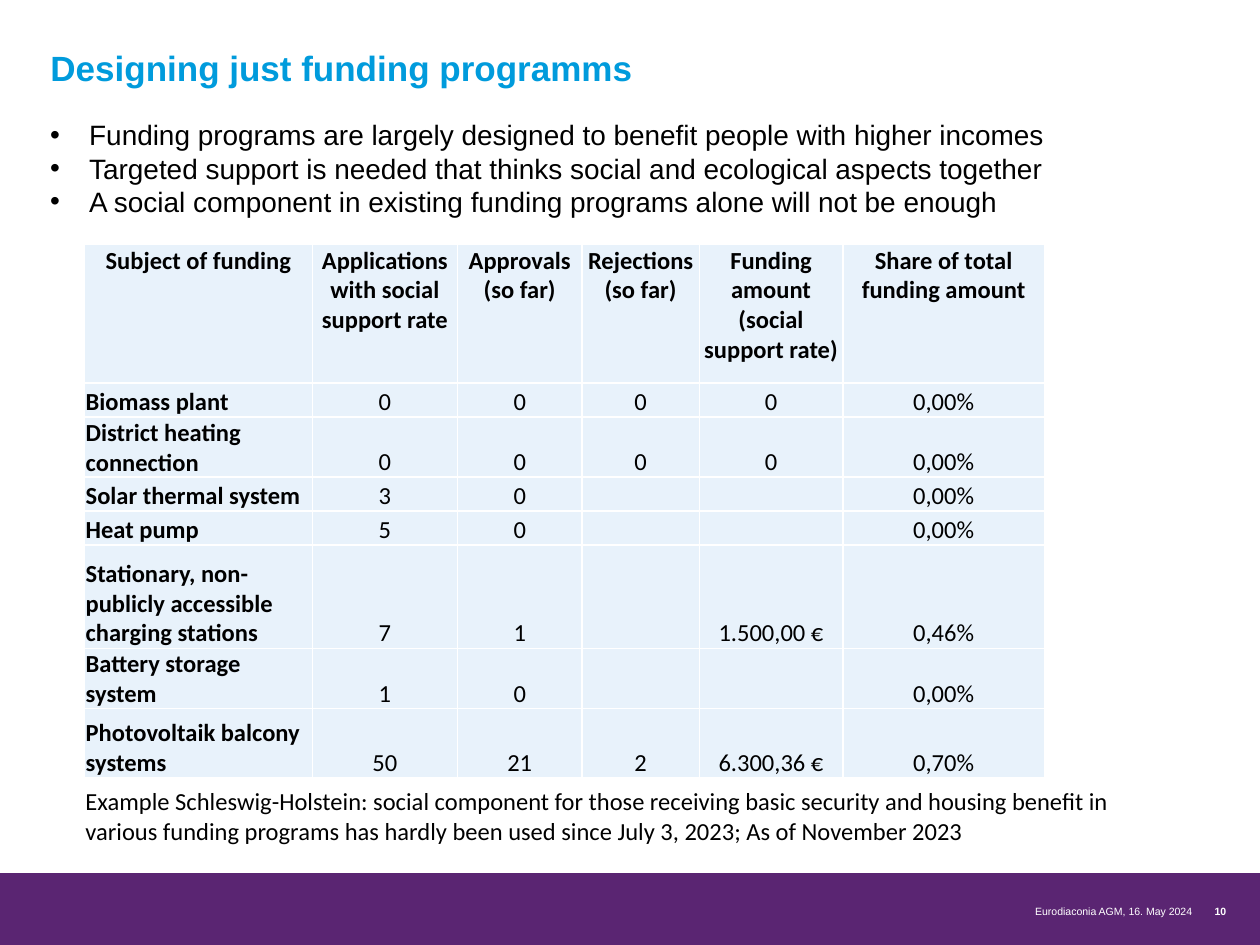
from dataclasses import dataclass

from lxml.etree import SubElement
from pptx import Presentation
from pptx.dml.color import RGBColor
from pptx.enum.shapes import MSO_SHAPE
from pptx.enum.text import MSO_ANCHOR as Anchor, MSO_AUTO_SIZE as AutoSize, PP_ALIGN as Align
from pptx.oxml.ns import qn
from pptx.util import Inches, Pt


@dataclass(frozen=True)
class Theme:
    heading_font: str = "Arial"
    table_font: str = "Calibri"
    heading: str = "009BDC"
    ink: str = "000000"
    white: str = "FFFFFF"
    band: str = "5A2572"
    cell: str = "E8F2FB"
    title_size: int = 20
    bullet_size: int = 16
    table_size: int = 14
    footer_size: int = 6


BULLETS = [
    "Funding programs are largely designed to benefit people with higher incomes",
    "Targeted support is needed that thinks social and ecological aspects together",
    "A social component in existing funding programs alone will not be enough",
]
FUNDING = [
    ["Subject of funding", "Applications with social support rate", "Approvals (so far)",
     "Rejections (so far)", "Funding amount (social support rate)",
     "Share of total funding amount"],
    ["Biomass plant", "0", "0", "0", "0", "0,00%"],
    ["District heating connection", "0", "0", "0", "0", "0,00%"],
    ["Solar thermal system", "3", "0", "", "", "0,00%"],
    ["Heat pump", "5", "0", "", "", "0,00%"],
    ["Stationary, non-publicly accessible charging stations", "7", "1", "",
     "1.500,00 €", "0,46%"],
    ["Battery storage system", "1", "0", "", "", "0,00%"],
    ["Photovoltaik balcony systems", "50", "21", "2", "6.300,36 €", "0,70%"],
]
COLUMN_WIDTHS = [1.81, 1.15, 0.99, 0.93, 1.14, 1.6]
ROW_HEIGHTS = [1.1, 0.27, 0.27, 0.27, 0.27, 0.82, 0.27, 0.55]
CAPTION = ("Example Schleswig-Holstein: social component for those receiving basic security "
           "and housing benefit in various funding programs has hardly been used "
           "since July 3, 2023; As of November 2023")


class SlideBuilder:
    def __init__(self, slide, theme):
        self.slide = slide
        self.theme = theme

    def add_span(self, para, text, font, size, color, bold=False):
        span = para.add_run()
        span.text = text
        span.font.name = font
        span.font.size = Pt(size)
        span.font.bold = bold
        span.font.color.rgb = RGBColor.from_string(color)

    def place(self, shape, left, top, width, height):
        shape.left, shape.top = Inches(left), Inches(top)
        shape.width, shape.height = Inches(width), Inches(height)

    def title(self, text, *bounds):
        title = self.slide.shapes.title
        self.place(title, *bounds)
        frame = title.text_frame
        frame.auto_size = AutoSize.NONE
        frame.vertical_anchor = Anchor.TOP
        para = frame.paragraphs[0]
        para.alignment = Align.LEFT
        para.line_spacing = Pt(22)
        self.add_span(para, text, self.theme.heading_font, self.theme.title_size,
                      self.theme.heading, bold=True)

    def text_box(self, *bounds, anchor=Anchor.TOP, wrap=True):
        box = self.slide.shapes.add_textbox(*map(Inches, bounds))
        frame = box.text_frame
        frame.word_wrap = wrap
        frame.vertical_anchor = anchor
        return frame

    def bullets(self, items, *bounds):
        frame = self.text_box(*bounds)
        for index, item in enumerate(items):
            para = frame.add_paragraph() if index else frame.paragraphs[0]
            para.line_spacing = Pt(19)
            properties = para._p.get_or_add_pPr()
            indent = Inches(0.31)
            properties.set("marL", str(indent))
            properties.set("indent", str(-indent))
            SubElement(properties, qn("a:buFont"), typeface=self.theme.heading_font)
            SubElement(properties, qn("a:buChar"), char="•")
            self.add_span(para, item, self.theme.heading_font, self.theme.bullet_size,
                          self.theme.ink)

    def caption(self, text, *bounds):
        para = self.text_box(*bounds).paragraphs[0]
        self.add_span(para, text, self.theme.table_font, self.theme.table_size, self.theme.ink)

    def footer(self, text, *bounds, bold=False, wrap=True):
        para = self.text_box(*bounds, anchor=Anchor.BOTTOM, wrap=wrap).paragraphs[0]
        para.alignment = Align.RIGHT
        self.add_span(para, text, self.theme.heading_font, self.theme.footer_size,
                      self.theme.white, bold)

    def band(self, *bounds):
        band = self.slide.shapes.add_shape(MSO_SHAPE.RECTANGLE, *map(Inches, bounds))
        band.shadow.inherit = False
        band.fill.solid()
        band.fill.fore_color.rgb = RGBColor.from_string(self.theme.band)
        band.line.fill.background()

    def style_cell(self, cell):
        """Set the insets, white borders and fill; borders must precede the fill."""
        cell.margin_left = cell.margin_right = cell.margin_top = Inches(0.01)
        cell.margin_bottom = 0
        properties = cell._tc.get_or_add_tcPr()
        for side in ("lnL", "lnR", "lnT", "lnB"):
            border = SubElement(properties, qn(f"a:{side}"), w=str(Pt(1)))
            paint = SubElement(border, qn("a:solidFill"))
            SubElement(paint, qn("a:srgbClr"), val=self.theme.white)
        cell.fill.solid()
        cell.fill.fore_color.rgb = RGBColor.from_string(self.theme.cell)

    def table(self, rows, left, top, widths, heights):
        frame = self.slide.shapes.add_table(
            len(rows), len(widths), Inches(left), Inches(top),
            Inches(sum(widths)), Inches(sum(heights)))
        table = frame.table
        table.first_row = table.horz_banding = False
        for column, width in zip(table.columns, widths):
            column.width = Inches(width)
        for row, height in zip(table.rows, heights):
            row.height = Inches(height)
        for row_index, values in enumerate(rows):
            for column_index, value in enumerate(values):
                cell = table.cell(row_index, column_index)
                self.style_cell(cell)
                is_header, is_label = row_index == 0, column_index == 0
                cell.vertical_anchor = Anchor.TOP if is_header else Anchor.BOTTOM
                para = cell.text_frame.paragraphs[0]
                para.alignment = Align.LEFT if is_label and not is_header else Align.CENTER
                if value:
                    self.add_span(para, value, self.theme.table_font, self.theme.table_size,
                                  self.theme.ink, bold=is_header or is_label)
                else:
                    SubElement(para._p, qn("a:endParaRPr"),
                               sz=str(self.theme.table_size * 100))


def main():
    deck = Presentation()
    deck.slide_width, deck.slide_height = Inches(10), Inches(7.5)
    title_only = deck.slide_layouts[5]
    page = SlideBuilder(deck.slides.add_slide(title_only), Theme())
    page.band(0, 6.93, 10, 0.57)
    page.title("Designing just funding programms", 0.3, 0.35, 9.43, 0.76)
    page.bullets(BULLETS, 0.3, 0.89, 9.43, 0.7)
    page.footer("10", 9.45, 7.13, 0.38, 0.2, bold=True, wrap=False)
    page.table(FUNDING, 0.67, 1.94, COLUMN_WIDTHS, ROW_HEIGHTS)
    page.caption(CAPTION, 0.58, 6.19, 8.6, 0.57)
    page.footer("Eurodiaconia AGM, 16. May 2024", 6.23, 7.13, 3.33, 0.2)
    deck.save("out.pptx")


if __name__ == "__main__":
    main()
